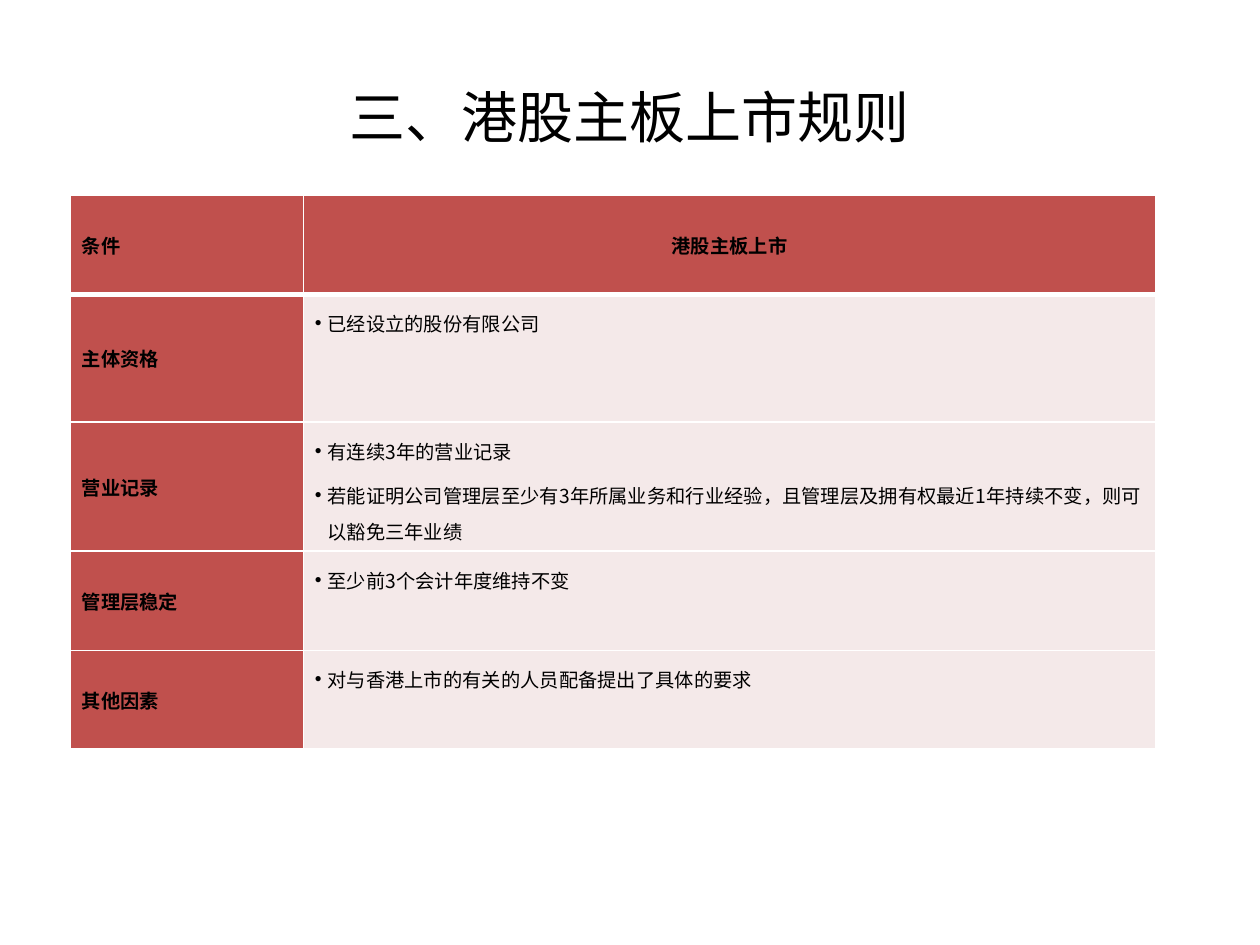
from lxml import etree
from pptx import Presentation
from pptx.dml.color import RGBColor
from pptx.enum.text import MSO_ANCHOR, PP_ALIGN
from pptx.oxml.ns import qn
from pptx.util import Inches, Pt

FONT = "Noto Sans CJK SC"
BLACK = RGBColor(0x00, 0x00, 0x00)
WHITE = RGBColor(0xFF, 0xFF, 0xFF)
RED = RGBColor(0xC0, 0x50, 0x4D)
PINK = RGBColor(0xF4, 0xE9, 0xE9)
LEFT, CENTER = PP_ALIGN.LEFT, PP_ALIGN.CENTER
TOP, MIDDLE = MSO_ANCHOR.TOP, MSO_ANCHOR.MIDDLE

HEADER = ("条件", "港股主板上市")
RULES = [
    ("主体资格", ["已经设立的股份有限公司"]),
    ("营业记录", [
        "有连续3年的营业记录",
        "若能证明公司管理层至少有3年所属业务和行业经验，且管理层及拥有权最近1年持续不变，则可以豁免三年业绩",
    ]),
    ("管理层稳定", ["至少前3个会计年度维持不变"]),
    ("其他因素", ["对与香港上市的有关的人员配备提出了具体的要求"]),
]
COL_WIDTHS = (1.85, 6.76)
ROW_HEIGHTS = (0.79, 1.01, 1.01, 0.79, 0.78)


def write(tf, lines, size=11, bold=False, align=LEFT, before=4.4, bullet=False):
    for i, line in enumerate(lines):
        p = tf.paragraphs[0] if i == 0 else tf.add_paragraph()
        p.alignment = align
        p.space_before = Pt(before)
        if bullet:
            p.line_spacing = 1.3
            pPr = p._p.get_or_add_pPr()
            pPr.set("marL", str(Inches(0.1)))
            pPr.set("indent", str(-Inches(0.1)))
            etree.SubElement(pPr, qn("a:buFont"), typeface="Arial")
            etree.SubElement(pPr, qn("a:buChar"), char="•")
        r = p.add_run()
        r.text = line
        r.font.name = FONT
        r.font.size = Pt(size)
        r.font.bold = bold
        r.font.color.rgb = BLACK
        etree.SubElement(r._r.get_or_add_rPr(), qn("a:ea"), typeface=FONT)


def style_cell(cell, color, anchor, margin, bottom=1):
    """Set fill, white borders, anchor and top and bottom margins."""
    cell.vertical_anchor = anchor
    cell.margin_left = cell.margin_right = Inches(0.09)
    cell.margin_top = cell.margin_bottom = Inches(margin)
    tcPr = cell._tc.get_or_add_tcPr()
    for side, width in (("L", 1), ("R", 1), ("T", 1), ("B", bottom)):
        ln = etree.SubElement(tcPr, qn("a:ln" + side), w=str(Pt(width)))
        fill = etree.SubElement(ln, qn("a:solidFill"))
        etree.SubElement(fill, qn("a:srgbClr"), val=str(WHITE))
    cell.fill.solid()
    cell.fill.fore_color.rgb = color


prs = Presentation()
prs.slide_width, prs.slide_height = Inches(10), Inches(7.5)
s = prs.slides.add_slide(prs.slide_layouts[5])

title = s.shapes.title
title.left, title.top = Inches(0.5), Inches(0.3)
title.width, title.height = Inches(9), Inches(1.25)
title.text_frame.vertical_anchor = MIDDLE
write(title.text_frame, [HEADER[1].join(("三、", "规则"))], size=32, align=CENTER, before=0)

table = s.shapes.add_table(
    len(ROW_HEIGHTS), len(COL_WIDTHS), Inches(0.56), Inches(1.55),
    Inches(sum(COL_WIDTHS)), Inches(sum(ROW_HEIGHTS))).table
for col, width in zip(table.columns, COL_WIDTHS):
    col.width = Inches(width)
for row, height in zip(table.rows, ROW_HEIGHTS):
    row.height = Inches(height)

for cell, text, align in zip(table.rows[0].cells, HEADER, (LEFT, CENTER)):
    style_cell(cell, RED, MIDDLE, 0.04, bottom=3)
    write(cell.text_frame, [text], bold=True, align=align)

for i, (condition, points) in enumerate(RULES, start=1):
    label, detail = table.cell(i, 0), table.cell(i, 1)
    style_cell(label, RED, MIDDLE, 0.04)
    write(label.text_frame, [condition], bold=True)
    style_cell(detail, PINK, TOP, 0.05)
    write(detail.text_frame, points, bullet=True)

prs.save("out.pptx")
